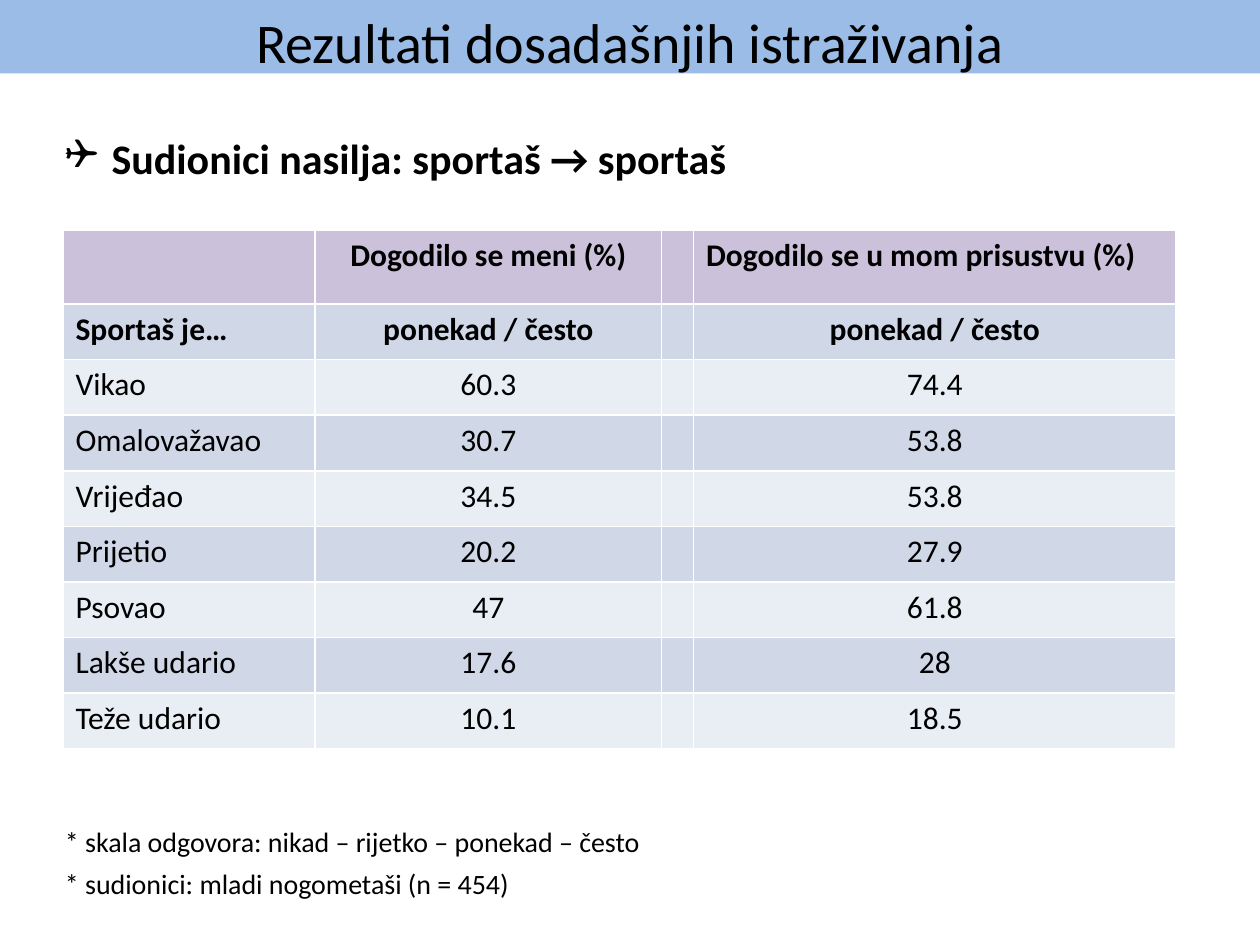
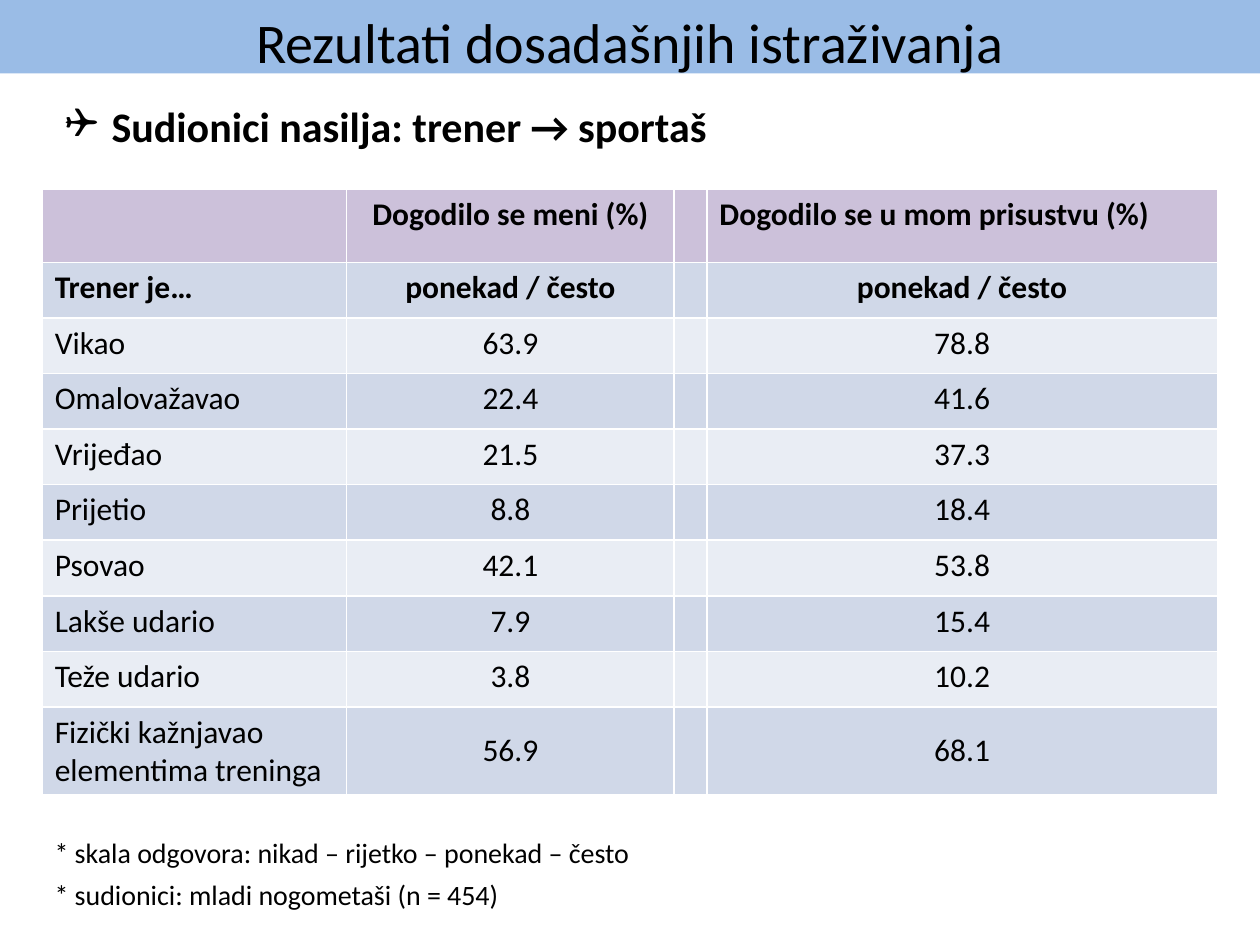
import pptx
import pptx.dml.color
import pptx.enum.text
import pptx.oxml.ns
import pptx.util
from lxml import etree

Cm, Pt = pptx.util.Cm, pptx.util.Pt
CENTER = pptx.enum.text.PP_ALIGN.CENTER
LEFT = pptx.enum.text.PP_ALIGN.LEFT
TOP = pptx.enum.text.MSO_ANCHOR.TOP
MIDDLE = pptx.enum.text.MSO_ANCHOR.MIDDLE

FONT = "Calibri"
COLOURS = {
    "text": "000000",
    "title band": "8EB4E3",
    "header": "CCC1DA",
    "dark row": "D0D8E8",
    "light row": "E9EDF4",
}

TITLE = "Rezultati dosadašnjih istraživanja"
HEADER = ("", "Dogodilo se meni (%)", "", "Dogodilo se u mom prisustvu (%)")
FREQUENCY = "ponekad / često"
NOTES = [
    "* skala odgovora: nikad – rijetko – ponekad – često",
    "* sudionici: mladi nogometaši (n = 454)",
]

# Lengths are in centimetres; results are (act, to me, in my presence).
RESULT_SLIDES = [
    {
        "heading": "Sudionici nasilja: sportaš → sportaš",
        "heading top": 2.54,
        "subject": "Sportaš je…",
        "table at": (1.27, 4.65),
        "columns": (5.08, 6.99, 0.64, 9.73),
        "notes at": (1.06, 16.5),
        "results": [
            ("Vikao", "60.3", "74.4"),
            ("Omalovažavao", "30.7", "53.8"),
            ("Vrijeđao", "34.5", "53.8"),
            ("Prijetio", "20.2", "27.9"),
            ("Psovao", "47", "61.8"),
            ("Lakše udario", "17.6", "28"),
            ("Teže udario", "10.1", "18.5"),
        ],
    },
    {
        "heading": "Sudionici nasilja: trener → sportaš",
        "heading top": 1.91,
        "subject": "Trener je…",
        "table at": (0.85, 3.81),
        "columns": (6.14, 6.6, 0.66, 10.29),
        "notes at": (0.85, 16.72),
        "results": [
            ("Vikao", "63.9", "78.8"),
            ("Omalovažavao", "22.4", "41.6"),
            ("Vrijeđao", "21.5", "37.3"),
            ("Prijetio", "8.8", "18.4"),
            ("Psovao", "42.1", "53.8"),
            ("Lakše udario", "7.9", "15.4"),
            ("Teže udario", "3.8", "10.2"),
            ("Fizički kažnjavao elementima treninga", "56.9", "68.1"),
        ],
    },
]

SLIDE_SIZE = (25.4, 19.05)
BAND_HEIGHT = 1.48
HEADER_ROW, BODY_ROW, TWO_LINE_ROW = 1.48, 1.12, 1.78
TWO_LINE_LENGTH = 25
NOTE_STEP = 0.85


def colour(name):
    return pptx.dml.color.RGBColor.from_string(COLOURS[name])


def paint(fill, name):
    fill.solid()
    fill.fore_color.rgb = colour(name)


def write(frame, text, size, bold=False, align=LEFT):
    frame.text = text
    paragraph = frame.paragraphs[0]
    paragraph.alignment = align
    paragraph.font.name = FONT
    paragraph.font.size = Pt(size)
    paragraph.font.bold = bold
    paragraph.font.color.rgb = colour("text")
    return paragraph


def add_title(slide):
    title = slide.shapes.title
    title.left = title.top = 0
    title.width, title.height = Cm(SLIDE_SIZE[0]), Cm(BAND_HEIGHT)
    paint(title.fill, "title band")
    band_colour = title.fill._xPr.find(".//" + pptx.oxml.ns.qn("a:srgbClr"))
    etree.SubElement(band_colour, pptx.oxml.ns.qn("a:alpha"), val="89000")
    frame = title.text_frame
    frame.auto_size = pptx.enum.text.MSO_AUTO_SIZE.NONE
    frame.vertical_anchor = TOP
    frame.margin_top = Cm(0.15)
    write(frame, TITLE, 32, align=CENTER)


def add_text(slide, text, left, top, width, height, size, bold=False):
    box = slide.shapes.add_textbox(Cm(left), Cm(top), Cm(width), Cm(height))
    box.text_frame.word_wrap = True
    return write(box.text_frame, text, size, bold)


def add_square_bullet(paragraph, indent):
    properties = paragraph._p.get_or_add_pPr()
    properties.set("marL", str(Cm(indent)))
    properties.set("indent", str(-Cm(indent)))
    etree.SubElement(properties, pptx.oxml.ns.qn("a:buFont"), typeface="Wingdings")
    etree.SubElement(properties, pptx.oxml.ns.qn("a:buChar"), char="❑")


def add_results(slide, content):
    rows = [HEADER, (content["subject"], FREQUENCY, "", FREQUENCY)]
    rows += [(act, to_me, "", witnessed) for act, to_me, witnessed in content["results"]]
    heights = [HEADER_ROW] + [
        TWO_LINE_ROW if len(row[0]) > TWO_LINE_LENGTH else BODY_ROW for row in rows[1:]
    ]
    widths = content["columns"]
    left, top = content["table at"]
    table = slide.shapes.add_table(
        len(rows), len(widths), Cm(left), Cm(top), Cm(sum(widths)), Cm(sum(heights))
    ).table
    for column, width in zip(table.columns, widths):
        column.width = Cm(width)

    for row_index, (row, height) in enumerate(zip(rows, heights)):
        table.rows[row_index].height = Cm(height)
        if row_index == 0:
            fill_name = "header"
        else:
            fill_name = "dark row" if row_index % 2 else "light row"
        for column_index, text in enumerate(row):
            cell = table.cell(row_index, column_index)
            paint(cell.fill, fill_name)
            left_aligned = column_index == 0 or (row_index == 0 and column_index == 3)
            write(cell.text_frame, text, 18, bold=row_index < 2,
                  align=LEFT if left_aligned else CENTER)
            if height == TWO_LINE_ROW and column_index > 0:
                cell.vertical_anchor = MIDDLE


def add_result_slide(presentation, content):
    slide = presentation.slides.add_slide(presentation.slide_layouts[5])
    add_title(slide)
    heading = add_text(slide, content["heading"], 1.06, content["heading top"],
                       21.8, 1.28, 24, bold=True)
    add_square_bullet(heading, 0.94)
    add_results(slide, content)
    left, top = content["notes at"]
    for index, note in enumerate(NOTES):
        add_text(slide, note, left, top + index * NOTE_STEP, 20.53, 0.94, 16)


def main():
    presentation = pptx.Presentation()
    presentation.slide_width, presentation.slide_height = map(Cm, SLIDE_SIZE)
    for content in RESULT_SLIDES:
        add_result_slide(presentation, content)
    presentation.save("out.pptx")


if __name__ == "__main__":
    main()
